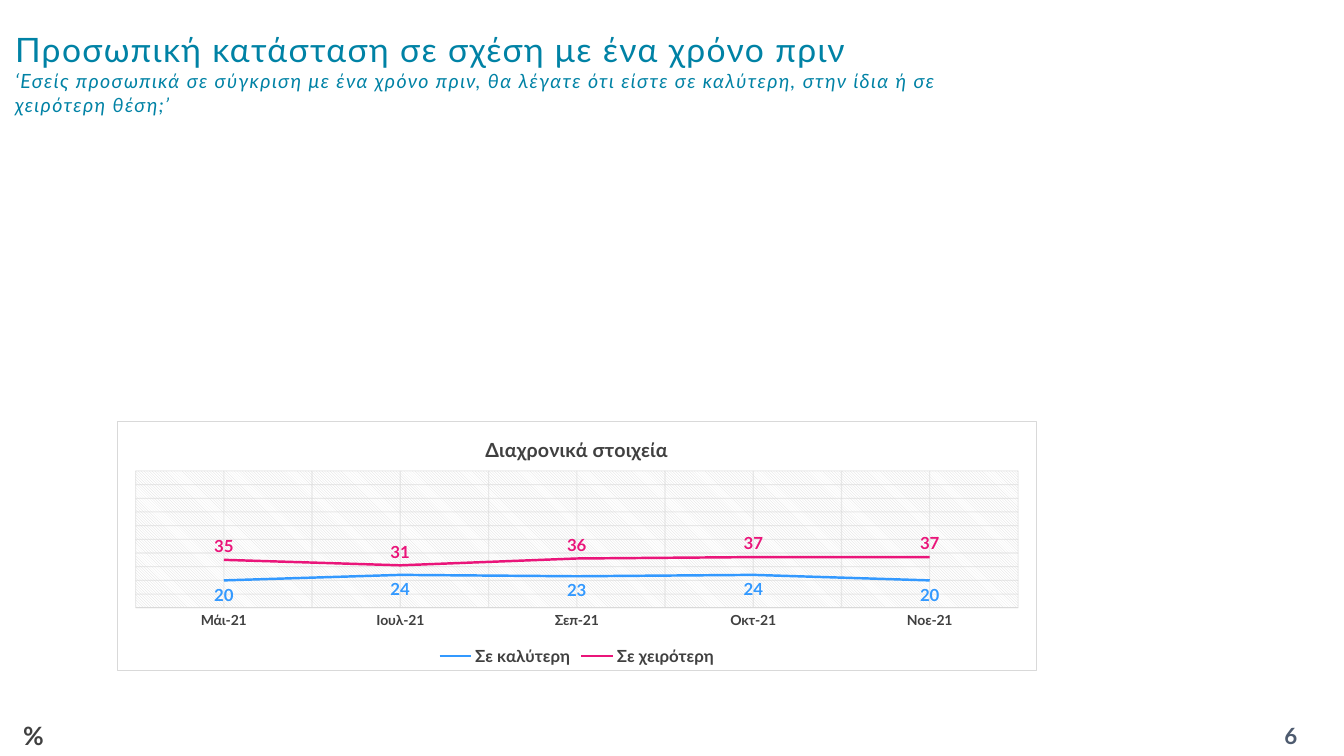
import copy

import pptx
import pptx.chart.data
import pptx.dml.color
import pptx.enum.chart
import pptx.enum.text
import pptx.oxml
import pptx.oxml.ns
import pptx.util

Pt = pptx.util.Pt
RGBColor = pptx.dml.color.RGBColor
ALIGN = pptx.enum.text.PP_ALIGN
ANCHOR = pptx.enum.text.MSO_ANCHOR
LABEL = pptx.enum.chart.XL_LABEL_POSITION

TEAL = RGBColor(0x00, 0x82, 0xA5)
SLATE = RGBColor(0x4E, 0x5B, 0x6F)
DARK = RGBColor(0x40, 0x40, 0x40)
LIGHT = RGBColor(0xD9, 0xD9, 0xD9)
WHITE = RGBColor(0xFF, 0xFF, 0xFF)
BLUE = RGBColor(0x33, 0x99, 0xFF)
PINK = RGBColor(0xEA, 0x15, 0x7A)

FONT = "Lato"
MONTHS = ["Μάι-21", "Ιουλ-21", "Σεπ-21", "Οκτ-21", "Νοε-21"]
SERIES = [
    ("Σε καλύτερη", [20, 24, 23, 24, 20], BLUE, LABEL.BELOW),
    ("Σε χειρότερη", [35, 31, 36, 37, 37], PINK, LABEL.ABOVE),
]


def style_font(font, size, color, bold=True):
    font.name = FONT
    font.size = Pt(size)
    font.bold = bold
    font.color.rgb = color


def style_line(line, color, width):
    line.color.rgb = color
    line.width = Pt(width)


def parse_chart_xml(tag, content):
    names = pptx.oxml.ns.nsdecls("c", "a")
    return pptx.oxml.parse_xml(f"<c:{tag} {names}>{content}</c:{tag}>")


def set_title(slide, heading, question):
    title = slide.shapes.title
    title.left, title.top, title.width, title.height = Pt(3.6), Pt(9.4), Pt(714.2), Pt(85)
    frame = title.text_frame
    frame.auto_size = pptx.enum.text.MSO_AUTO_SIZE.NONE
    frame.vertical_anchor = ANCHOR.MIDDLE
    para = frame.paragraphs[0]
    para.alignment = ALIGN.LEFT
    style_font(para.font, 24, TEAL, False)
    heading_span = para.add_run()
    heading_span.text = heading
    para.add_line_break()
    question_span = para.add_run()
    question_span.text = question
    question_span.font.size = Pt(14)
    question_span.font.italic = True
    for span in para.runs:
        span.font._element.set("spc", "100")


def add_label(slide, text, left, width, size, color, alignment, anchor):
    box = slide.shapes.add_textbox(Pt(left), Pt(511.2), Pt(width), Pt(28.8))
    frame = box.text_frame
    frame.word_wrap = True
    frame.vertical_anchor = anchor
    para = frame.paragraphs[0]
    para.text = text
    para.alignment = alignment
    style_font(para.font, size, color)


def style_chart_areas(chart):
    plot_area = chart.element.xpath("c:chart/c:plotArea")[0]
    for layout in plot_area.xpath("c:layout"):
        plot_area.remove(layout)
    modes = '<c:layoutTarget val="inner"/><c:xMode val="edge"/><c:yMode val="edge"/>'
    bounds = '<c:x val="0.02"/><c:y val="0.2"/><c:w val="0.96"/><c:h val="0.55"/>'
    plot_area.insert(0, parse_chart_xml(
        "layout", f"<c:manualLayout>{modes}{bounds}</c:manualLayout>"))
    plot_area.append(parse_chart_xml(
        "spPr",
        f'<a:pattFill prst="ltDnDiag"><a:fgClr><a:srgbClr val="{LIGHT}"/></a:fgClr>'
        f'<a:bgClr><a:srgbClr val="{WHITE}"/></a:bgClr></a:pattFill>'
        "<a:ln><a:noFill/></a:ln>"))
    chart.element.xpath("c:chart")[0].addnext(parse_chart_xml(
        "spPr",
        f'<a:solidFill><a:srgbClr val="{WHITE}"/></a:solidFill>'
        f'<a:ln w="{Pt(0.75)}"><a:solidFill><a:srgbClr val="{LIGHT}"/></a:solidFill></a:ln>'))


def style_axes(chart):
    months = chart.category_axis
    values = chart.value_axis
    months.has_major_gridlines = True
    months.has_minor_gridlines = True
    months.major_tick_mark = pptx.enum.chart.XL_TICK_MARK.NONE
    style_font(months.tick_labels.font, 10, DARK)
    style_line(months.format.line, LIGHT, 0.75)
    values.minimum_scale = 0
    values.maximum_scale = 100
    values.major_unit = 10
    values.has_major_gridlines = True
    values.visible = False
    for axis in (months, values):
        style_line(axis.major_gridlines.format.line, LIGHT, 0.75)
    for color in chart.element.xpath(".//c:majorGridlines//a:srgbClr"):
        color.append(pptx.oxml.parse_xml(
            f'<a:alpha {pptx.oxml.ns.nsdecls("a")} val="54000"/>'))
    grid_style = chart.element.xpath(".//c:catAx/c:majorGridlines/c:spPr")[0]
    minor_grid = chart.element.xpath(".//c:catAx/c:minorGridlines")[0]
    minor_grid.append(copy.deepcopy(grid_style))


def add_trend_chart(slide):
    data = pptx.chart.data.CategoryChartData()
    data.categories = MONTHS
    for name, values, color, position in SERIES:
        data.add_series(name, values)
    chart = slide.shapes.add_chart(
        pptx.enum.chart.XL_CHART_TYPE.LINE,
        Pt(83.3), Pt(300.5), Pt(657.4), Pt(178.5), data).chart
    style_font(chart.font, 10, DARK, False)
    chart.has_title = True
    title = chart.chart_title
    para = title.text_frame.paragraphs[0]
    para.text = "Διαχρονικά στοιχεία"
    style_font(para.font, 14, DARK)
    chart.has_legend = True
    chart.legend.position = pptx.enum.chart.XL_LEGEND_POSITION.BOTTOM
    chart.legend.include_in_layout = False
    style_font(chart.legend.font, 12, DARK)
    plot = chart.plots[0]
    plot.vary_by_categories = False
    for series, (name, values, color, position) in zip(plot.series, SERIES):
        series.smooth = False
        series.marker.style = pptx.enum.chart.XL_MARKER_STYLE.NONE
        style_line(series.format.line, color, 1.75)
        labels = series.data_labels
        labels.show_value = True
        labels.position = position
        style_font(labels.font, 12, color)
    style_axes(chart)
    style_chart_areas(chart)


def main():
    deck = pptx.Presentation()
    deck.slide_width, deck.slide_height = Pt(960), Pt(540)
    page = deck.slides.add_slide(deck.slide_layouts[5])
    set_title(
        page,
        "Προσωπική κατάσταση σε σχέση με ένα χρόνο πριν",
        "‘Εσείς προσωπικά σε σύγκριση με ένα χρόνο πριν, θα λέγατε ότι είστε "
        "σε καλύτερη, στην ίδια ή σε χειρότερη θέση;’")
    add_label(page, "6", 884.2, 75.6, 16, SLATE, ALIGN.CENTER, ANCHOR.MIDDLE)
    add_label(page, "%", 9.4, 51.1, 18, DARK, ALIGN.LEFT, ANCHOR.TOP)
    add_trend_chart(page)
    deck.save("out.pptx")


if __name__ == "__main__":
    main()
